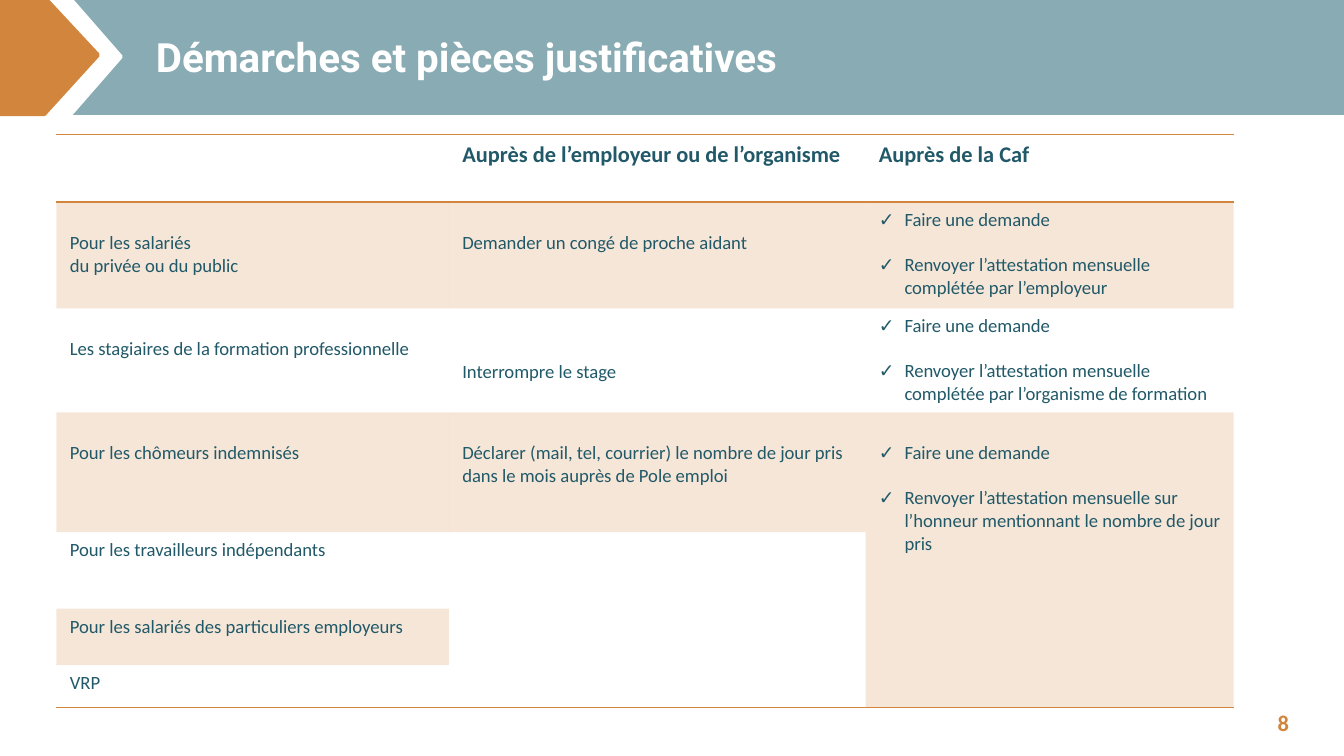
from lxml.etree import SubElement
from pptx import Presentation
from pptx.dml.color import RGBColor
from pptx.enum.shapes import MSO_SHAPE
from pptx.enum.text import MSO_ANCHOR, MSO_AUTO_SIZE, PP_ALIGN
from pptx.oxml import parse_xml
from pptx.oxml.ns import nsdecls, qn
from pptx.util import Inches, Pt

TEAL = RGBColor(0x89, 0xAB, 0xB3)
ORANGE = RGBColor(0xD2, 0x85, 0x3D)
INK = RGBColor(0x21, 0x59, 0x68)
WHITE = RGBColor(0xFF, 0xFF, 0xFF)
UNIT = Inches(0.1)
LINE = 1.7
NO_STYLE = "{2D5ABB26-0587-4C30-8999-92F81FD0307C}"

WIDTHS = [29.2, 31, 27.4]
HEIGHTS = [5.05, 7.9, 7.75, 8.9, 5.7, 4.2, 3.15]
HEADS = ["", "Auprès de l’employeur ou de l’organisme", "Auprès de la Caf"]
ASK = "Faire une demande"
ROWS = [
    [(1, ["Pour les salariés", "du privée ou du public"]),
     (1, ["Demander un congé de proche aidant"]),
     (0, [ASK, "Renvoyer l’attestation mensuelle complétée par l’employeur"])],
    [(1, ["Les stagiaires de la formation professionnelle"]),
     (2, ["Interrompre le stage"]),
     (0, [ASK, "Renvoyer l’attestation mensuelle complétée par "
               "l’organisme de formation"])],
    [(1, ["Pour les chômeurs indemnisés"]),
     (1, ["Déclarer (mail, tel, courrier) le nombre de jour pris dans le "
          "mois auprès de Pole emploi"]),
     (1, [ASK, "Renvoyer l’attestation mensuelle sur l’honneur "
               "mentionnant le nombre de jour pris"])],
    [(0, ["Pour les travailleurs indépendants"])],
    [(0, ["Pour les salariés des particuliers employeurs"])],
    [(0, ["VRP"])],
]


def grid(*values):
    return [round(v * UNIT) for v in values]


def write(frame, lines, size=10, color=INK, font="Calibri", bold=False,
          align=PP_ALIGN.LEFT, mark=None, gap=0):
    for i, line in enumerate(lines):
        para = frame.paragraphs[0] if i == 0 else frame.add_paragraph()
        para.alignment = align
        para.space_before = Pt(gap if i else 0)
        if mark:
            props = para._p.get_or_add_pPr()
            props.set("marL", str(Inches(0.19)))
            props.set("indent", str(-Inches(0.19)))
            SubElement(props, qn("a:buFont")).set("typeface", font)
            SubElement(props, qn("a:buChar")).set("char", mark)
        if not line:
            SubElement(para._p, qn("a:endParaRPr")).set("sz", str(size * 100))
            continue
        run = para.add_run()
        run.text = line
        run.font.size, run.font.name, run.font.bold = Pt(size), font, bold
        run.font.color.rgb = color


class Deck:
    def __init__(self):
        self.file = Presentation()
        self.file.slide_width, self.file.slide_height = grid(100, 56.25)
        self.slide = self.file.slides.add_slide(self.file.slide_layouts[5])
        self.shapes = self.slide.shapes

    def paint(self, shape, color):
        shape.shadow.inherit = False
        shape.fill.solid()
        shape.fill.fore_color.rgb = color
        shape.line.color.rgb = color
        shape.line.width = Pt(2)

    def block(self, kind, box, color):
        shape = self.shapes.add_shape(kind, *grid(*box))
        self.paint(shape, color)
        return shape

    def outline(self, points, color):
        start, *rest = [tuple(grid(*p)) for p in points]
        path = self.shapes.build_freeform(*start)
        path.add_line_segments(rest, close=True)
        self.paint(path.convert_to_shape(), color)

    def title(self, text, box):
        head = self.shapes.title
        head.left, head.top, head.width, head.height = grid(*box)
        frame = head.text_frame
        frame.auto_size = MSO_AUTO_SIZE.NONE
        frame.vertical_anchor = MSO_ANCHOR.MIDDLE
        write(frame, [text], size=21.6, color=WHITE, font="Roboto", bold=True)
        head._element.getparent().append(head._element)

    def label(self, text, box, **style):
        frame = self.shapes.add_textbox(*grid(*box)).text_frame
        frame.word_wrap = True
        frame.vertical_anchor = MSO_ANCHOR.MIDDLE
        write(frame, [text], **style)

    def shade(self, cell):
        cell.fill.solid()
        cell.fill.fore_color.rgb = ORANGE
        tone = cell._tc.tcPr.find(".//" + qn("a:srgbClr"))
        SubElement(tone, qn("a:alpha")).set("val", "20000")

    def rule(self, cell, sides):
        for side in sides:
            edge = parse_xml(
                f'<a:ln{side} {nsdecls("a")} w="12700"><a:solidFill>'
                f'<a:srgbClr val="{ORANGE}"/></a:solidFill></a:ln{side}>')
            cell._tc.get_or_add_tcPr().insert(0, edge)

    def table(self, left, top):
        box = grid(left, top, sum(WIDTHS), sum(HEIGHTS))
        frame = self.shapes.add_table(len(HEIGHTS), len(WIDTHS), *box)
        table = frame.table
        table.first_row = table.horz_banding = False
        table._tbl.tblPr.find(qn("a:tableStyleId")).text = NO_STYLE
        for col, width in zip(table.columns, grid(*WIDTHS)):
            col.width = width
        for row, height in zip(table.rows, grid(*HEIGHTS)):
            row.height = height
        for c, text in enumerate(HEADS):
            cell = table.cell(0, c)
            cell.fill.background()
            write(cell.text_frame, [text], size=12, bold=True)
            self.rule(cell, "BT")
        for r, items in enumerate(ROWS, 1):
            for c in range(len(WIDTHS)):
                cell = table.cell(r, c)
                skip, lines = items[c] if c < len(items) else (0, [""])
                tick = c == 2 and lines[0]
                write(cell.text_frame, lines, mark="✓" if tick else None,
                      gap=12 if tick else 0)
                cell.margin_top = grid(0.5 + skip * LINE)[0]
                if r in (1, 3) or (r, c) == (5, 0):
                    self.shade(cell)
                else:
                    cell.fill.background()
        for r, c in [(6, 0), (6, 1), (6, 2), (4, 1), (3, 2)]:
            self.rule(table.cell(r, c), "B")
        for r, c in [(4, 1), (3, 2)]:
            table.cell(r, c).merge(table.cell(6, c))


def main():
    deck = Deck()
    deck.block(MSO_SHAPE.RECTANGLE, (0, 0, 100, 8.4), TEAL)
    arrow = deck.block(MSO_SHAPE.CHEVRON, (3.5, 0, 5.5, 8.45), WHITE)
    arrow.adjustments[0] = 0.67
    deck.outline([(-0.2, -0.2), (3.3, -0.2), (7.3, 4.1), (3.3, 8.5),
                  (-0.1, 8.5)], ORANGE)
    deck.title("Démarches et pièces justificatives", (10.6, 1.1, 84.4, 6.2))
    deck.label("8", (73.6, 52.25, 23.3, 3), size=12, color=ORANGE, bold=True,
               align=PP_ALIGN.RIGHT)
    deck.table(4.2, 10)
    deck.file.save("out.pptx")


if __name__ == "__main__":
    main()
